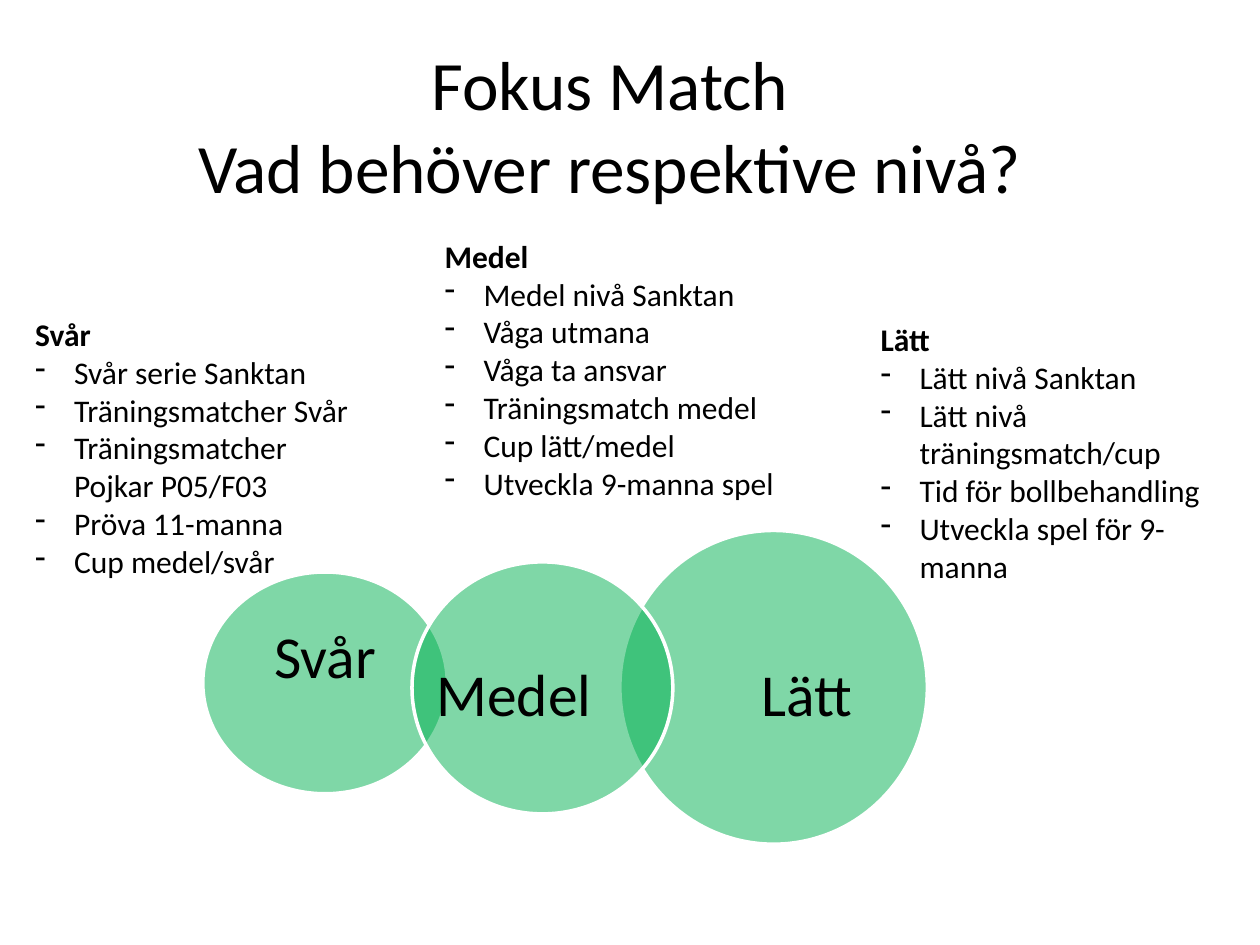
from dataclasses import dataclass

from lxml import etree
from pptx import Presentation
from pptx.dml.color import RGBColor
from pptx.enum.shapes import MSO_SHAPE
from pptx.enum.text import MSO_ANCHOR, PP_ALIGN
from pptx.oxml.ns import qn
from pptx.util import Inches, Pt

FONT = "Calibri"
BLACK, WHITE, GREEN = "000000", "FFFFFF", "00B050"
LEFT, CENTER = PP_ALIGN.LEFT, PP_ALIGN.CENTER
TOP, MIDDLE = MSO_ANCHOR.TOP, MSO_ANCHOR.MIDDLE
ELLIPSE = MSO_SHAPE.OVAL
BULLET_INDENT = Inches(0.31)

Box = tuple[float, float, float, float]


@dataclass
class Circle:
    label: str
    box: Box
    label_box: Box


@dataclass
class LevelList:
    heading: str
    box: Box
    items: list[str]


# Back to front
CIRCLES = [
    Circle("Svår", (1.61, 4.54, 1.94, 1.76), (1.87, 4.84, 1.42, 0.79)),
    Circle("Lätt", (4.92, 4.21, 2.44, 2.49), (5.67, 4.85, 1.47, 1.37)),
    Circle("Medel", (3.27, 4.46, 2.07, 2), (3.46, 4.98, 1.24, 1.1)),
]

LEVEL_LISTS = [
    LevelList("Svår", (0.18, 2.45, 2.69, 2.22), [
        "Svår serie Sanktan", "Träningsmatcher Svår",
        "Träningsmatcher Pojkar P05/F03", "Pröva 11-manna", "Cup medel/svår"]),
    LevelList("Medel", (3.43, 1.83, 2.83, 2.52), [
        "Medel nivå Sanktan", "Våga utmana", "Våga ta ansvar",
        "Träningsmatch medel", "Cup lätt/medel", "Utveckla 9-manna spel"]),
    LevelList("Lätt", (6.89, 2.49, 2.83, 2.22), [
        "Lätt nivå Sanktan", "Lätt nivå träningsmatch/cup",
        "Tid för bollbehandling", "Utveckla spel för 9-manna"]),
]


def color(value: str) -> RGBColor:
    return RGBColor.from_string(value)


def lengths(box: Box) -> list[int]:
    return [Inches(value) for value in box]


def write(paragraph, text: str, *, size: float, bold: bool = False,
          align=LEFT, line_spacing: float = 1.0, bullet: str = "") -> None:
    paragraph.text = text
    paragraph.alignment = align
    paragraph.line_spacing = line_spacing
    for run in paragraph.runs:
        run.font.name = FONT
        run.font.size = Pt(size)
        run.font.bold = bold
        run.font.color.rgb = color(BLACK)
    if bullet:
        properties = paragraph._p.get_or_add_pPr()
        properties.set("marL", str(BULLET_INDENT))
        properties.set("indent", str(-BULLET_INDENT))
        etree.SubElement(properties, qn("a:buChar"), char=bullet)


def add_text_frame(slide, box: Box, *, anchor=TOP):
    frame = slide.shapes.add_textbox(*lengths(box)).text_frame
    frame.word_wrap = True
    frame.vertical_anchor = anchor
    return frame


def add_title(slide) -> None:
    title = slide.shapes.title
    title.left, title.top, title.width, title.height = lengths((0.34, 0.36, 9, 1.25))
    title.text_frame.vertical_anchor = MIDDLE
    write(title.text_frame.paragraphs[0],
          "Fokus Match\vVad behöver respektive nivå?", size=39.6, align=CENTER)


def add_circle(slide, circle: Circle) -> None:
    shape = slide.shapes.add_shape(ELLIPSE, *lengths(circle.box))
    shape.shadow.inherit = False
    shape.fill.solid()
    shape.fill.fore_color.rgb = color(GREEN)
    fill_color = shape._element.spPr.find(qn("a:solidFill"))[0]
    etree.SubElement(fill_color, qn("a:alpha"), val="50000")
    shape.line.color.rgb = color(WHITE)
    shape.line.width = Pt(2)

    frame = add_text_frame(slide, circle.label_box, anchor=MIDDLE)
    frame.margin_left = frame.margin_right = 0
    frame.margin_top = frame.margin_bottom = 0
    write(frame.paragraphs[0], circle.label, size=34, align=CENTER, line_spacing=0.9)


def add_level_list(slide, level: LevelList) -> None:
    frame = add_text_frame(slide, level.box)
    write(frame.paragraphs[0], level.heading, size=18, bold=True)
    for item in level.items:
        write(frame.add_paragraph(), item, size=18, bullet="-")


def main() -> None:
    presentation = Presentation()
    presentation.slide_width, presentation.slide_height = Inches(10), Inches(7.5)
    slide = presentation.slides.add_slide(presentation.slide_layouts[5])

    add_title(slide)
    # Overlapping level circles
    for circle in CIRCLES:
        add_circle(slide, circle)
    # Needs of each level
    for level in LEVEL_LISTS:
        add_level_list(slide, level)

    presentation.save("out.pptx")


if __name__ == "__main__":
    main()
